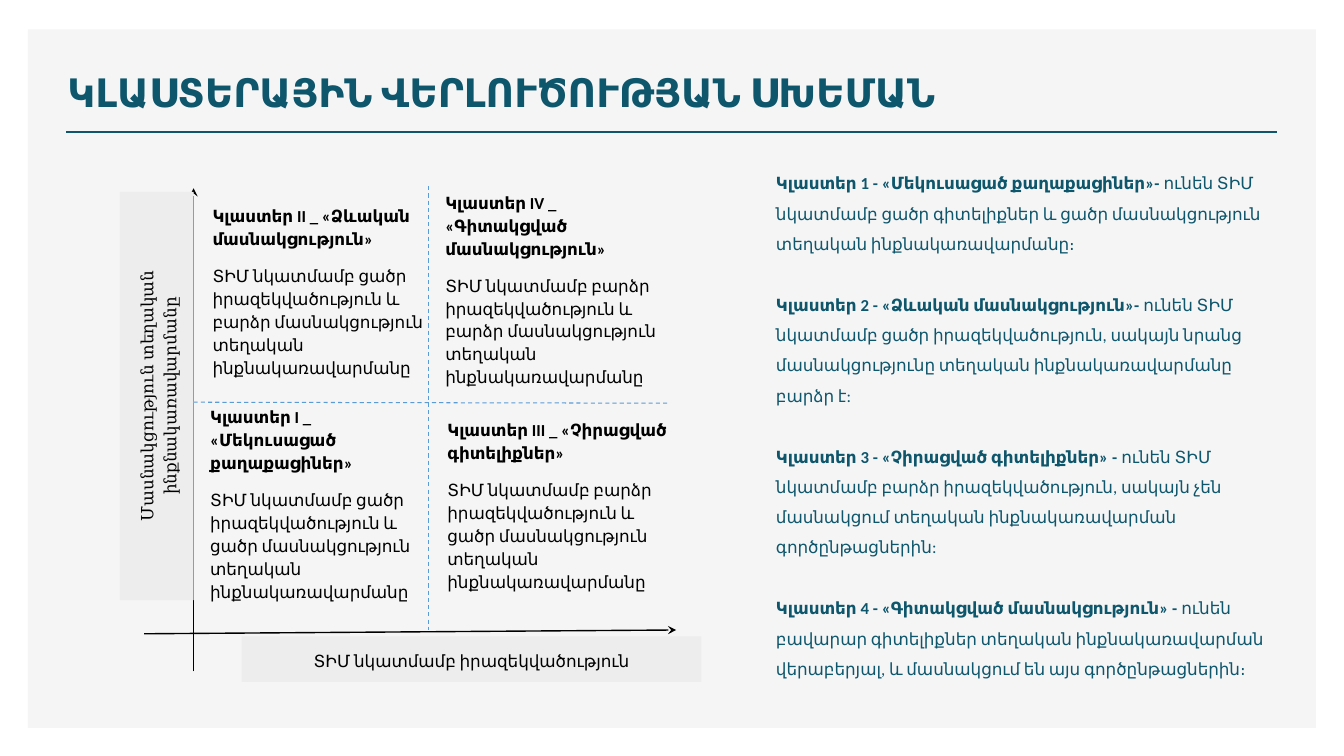
from lxml.etree import SubElement
from pptx import Presentation
from pptx.dml.color import RGBColor
from pptx.enum.dml import MSO_LINE
from pptx.enum.shapes import MSO_CONNECTOR, MSO_SHAPE
from pptx.enum.text import MSO_ANCHOR, MSO_AUTO_SIZE, PP_ALIGN
from pptx.oxml.ns import qn
from pptx.util import Pt

COLOURS = {"teal": "0E566C", "panel": "F5F5F5", "label": "EDEDED", "ink": "000000", "guide": "5B9BD5"}

QUADRANTS = [
    (57, 155, 161.5, 142.5, "Կլաստեր I _ «Մեկուսացած քաղաքացիներ»",
     "ՏԻՄ նկատմամբ ցածր իրազեկվածություն և ցածր մասնակցություն տեղական ինքնակառավարմանը"),
    (226.5, 163.5, 180.5, 127.5, "Կլաստեր III _ «Չիրացված գիտելիքներ»",
     "ՏԻՄ նկատմամբ բարձր իրազեկվածություն և ցածր մասնակցություն տեղական ինքնակառավարմանը"),
    (225, 0, 182, 146, "Կլաստեր IV _ «Գիտակցված մասնակցություն»",
     "ՏԻՄ նկատմամբ բարձր իրազեկվածություն և բարձր մասնակցություն տեղական ինքնակառավարմանը"),
    (58.7, 3, 170, 143.5, "Կլաստեր II _ «Ձևական մասնակցություն»",
     "ՏԻՄ նկատմամբ ցածր իրազեկվածություն և բարձր մասնակցություն տեղական ինքնակառավարմանը"),
]

CLUSTERS = [
    ("Կլաստեր 1 - «Մեկուսացած քաղաքացիներ»- ",
     "ունեն ՏԻՄ նկատմամբ ցածր գիտելիքներ և ցածր մասնակցություն տեղական ինքնակառավարմանը։"),
    ("Կլաստեր 2 - «Ձևական մասնակցություն»- ",
     "ունեն ՏԻՄ նկատմամբ ցածր իրազեկվածություն, սակայն նրանց մասնակցությունը տեղական "
     "ինքնակառավարմանը բարձր է:"),
    ("Կլաստեր 3 - «Չիրացված գիտելիքներ» - ",
     "ունեն ՏԻՄ նկատմամբ բարձր իրազեկվածություն, սակայն չեն մասնակցում տեղական "
     "ինքնակառավարման գործընթացներին:"),
    ("Կլաստեր 4 - «Գիտակցված մասնակցություն» - ",
     "ունեն բավարար գիտելիքներ տեղական ինքնակառավարման վերաբերյալ, և մասնակցում են այս "
     "գործընթացներին։"),
]


def colour(name):
    """Return the named palette colour."""
    return RGBColor.from_string(COLOURS[name])


def write_text(frame, paragraphs, size=12, ink="ink", font="Calibri", align=PP_ALIGN.LEFT,
               anchor=MSO_ANCHOR.MIDDLE, spacing=1.14, before=0, after=10, inset=3):
    """Fill a frame with paragraphs, each a list of (text, bold) runs."""
    frame.word_wrap = True
    frame.auto_size = MSO_AUTO_SIZE.NONE
    frame.vertical_anchor = anchor
    frame.margin_left = frame.margin_right = Pt(7.2)
    frame.margin_top = frame.margin_bottom = Pt(inset)
    for index, runs in enumerate(paragraphs):
        paragraph = frame.add_paragraph() if index else frame.paragraphs[0]
        paragraph.alignment = align
        paragraph.line_spacing = spacing
        paragraph.space_before = Pt(before if index else 0)
        paragraph.space_after = Pt(after)
        for text, bold in runs:
            run = paragraph.add_run()
            run.text = text
            run.font.size = Pt(size)
            run.font.name = font
            run.font.bold = bold
            run.font.color.rgb = colour(ink)


def add_block(slide, left, top, width, height, fill):
    """Add a plain filled rectangle."""
    block = slide.shapes.add_shape(MSO_SHAPE.RECTANGLE, Pt(left), Pt(top), Pt(width), Pt(height))
    block.shadow.inherit = False
    block.fill.solid()
    block.fill.fore_color.rgb = colour(fill)
    block.line.fill.background()
    return block


def add_line(slide, start, end, ink, weight, dashed=False, arrow=False):
    """Draw a straight line, optionally dashed or with an arrowhead."""
    line = slide.shapes.add_connector(MSO_CONNECTOR.STRAIGHT, *(Pt(value) for value in start + end))
    line.line.color.rgb = colour(ink)
    line.line.width = Pt(weight)
    if dashed:
        line.line.dash_style = MSO_LINE.DASH
    if arrow:
        SubElement(line.line._get_or_add_ln(), qn("a:tailEnd"), type="stealth")
    SubElement(line.element.spPr, qn("a:effectLst"))


def add_text_box(slide, left, top, width, height, paragraphs, **text_format):
    """Add a text box with formatted paragraphs."""
    box = slide.shapes.add_textbox(Pt(left), Pt(top), Pt(width), Pt(height))
    write_text(box.text_frame, paragraphs, **text_format)


def add_header(slide, left, top, width, height):
    """Place the panel, the title and the rule beneath it."""
    title = slide.shapes.title
    panel = add_block(slide, left, top, width, height, "panel")
    title.element.addprevious(panel.element)
    title.left, title.top, title.width, title.height = Pt(left + 21), Pt(top + 14.3), Pt(724.5), Pt(50.4)
    write_text(title.text_frame, [[("ԿԼԱՍՏԵՐԱՅԻՆ ՎԵՐԼՈՒԾՈՒԹՅԱՆ ՍԽԵՄԱՆ", True)]], size=28, ink="teal",
               anchor=MSO_ANCHOR.BOTTOM, spacing=1.0, after=0, inset=3.6)
    add_line(slide, (left + 27.5, top + 73.3), (left + width - 28, top + 73.3), "teal", 2)


def add_matrix(slide, left, top, width, height):
    """Draw the two axes, the four quadrants and the axis labels."""
    axis, middle, base = left + 52.3, left + 220, top + 317
    add_line(slide, (axis, top + 346.5), (axis, top + 1.5), "ink", 1, arrow=True)
    add_line(slide, (left + 17, base + 2.7), (left + 397, base), "ink", 1, arrow=True)
    add_line(slide, (middle, top), (middle, base), "guide", 0.75, dashed=True)
    add_line(slide, (axis, top + 154.3), (left + 391.5, top + 155), "guide", 0.75, dashed=True)

    awareness = add_block(slide, left + width - 328.3, top + height - 32.5, 328.3, 32.5, "label")
    write_text(awareness.text_frame, [[("ՏԻՄ նկատմամբ իրազեկվածություն", False)]], align=PP_ALIGN.CENTER)
    for across, down, wide, high, name, description in QUADRANTS:
        add_text_box(slide, left + across, top + down, wide, high, [[(name, True)], [(description, False)]])

    length, depth = 291.6, 52.6
    participation = add_block(slide, left + 26 - length / 2, top + 149.8 - depth / 2, length, depth, "label")
    participation.rotation = 270
    write_text(participation.text_frame, [[("Մասնակցություն տեղական ինքնակառավարմանը", False)]],
               font="Times New Roman", align=PP_ALIGN.CENTER)


def add_descriptions(slide, left, top, width, height):
    """List the four clusters with their explanations."""
    paragraphs = [[(name, True), (meaning, False)] for name, meaning in CLUSTERS]
    add_text_box(slide, left, top, width, height, paragraphs, ink="teal", anchor=MSO_ANCHOR.TOP,
                 spacing=1.5, before=10, after=12, inset=3.6)


def main():
    """Build and save the slide."""
    presentation = Presentation()
    presentation.slide_width, presentation.slide_height = Pt(960), Pt(540)
    slide = presentation.slides.add_slide(presentation.slide_layouts[5])
    add_header(slide, 20, 21, 920, 499)
    add_matrix(slide, 86, 133, 415, 354)
    add_descriptions(slide, 547.2, 113, 365.8, 391)
    presentation.save("out.pptx")


if __name__ == "__main__":
    main()
